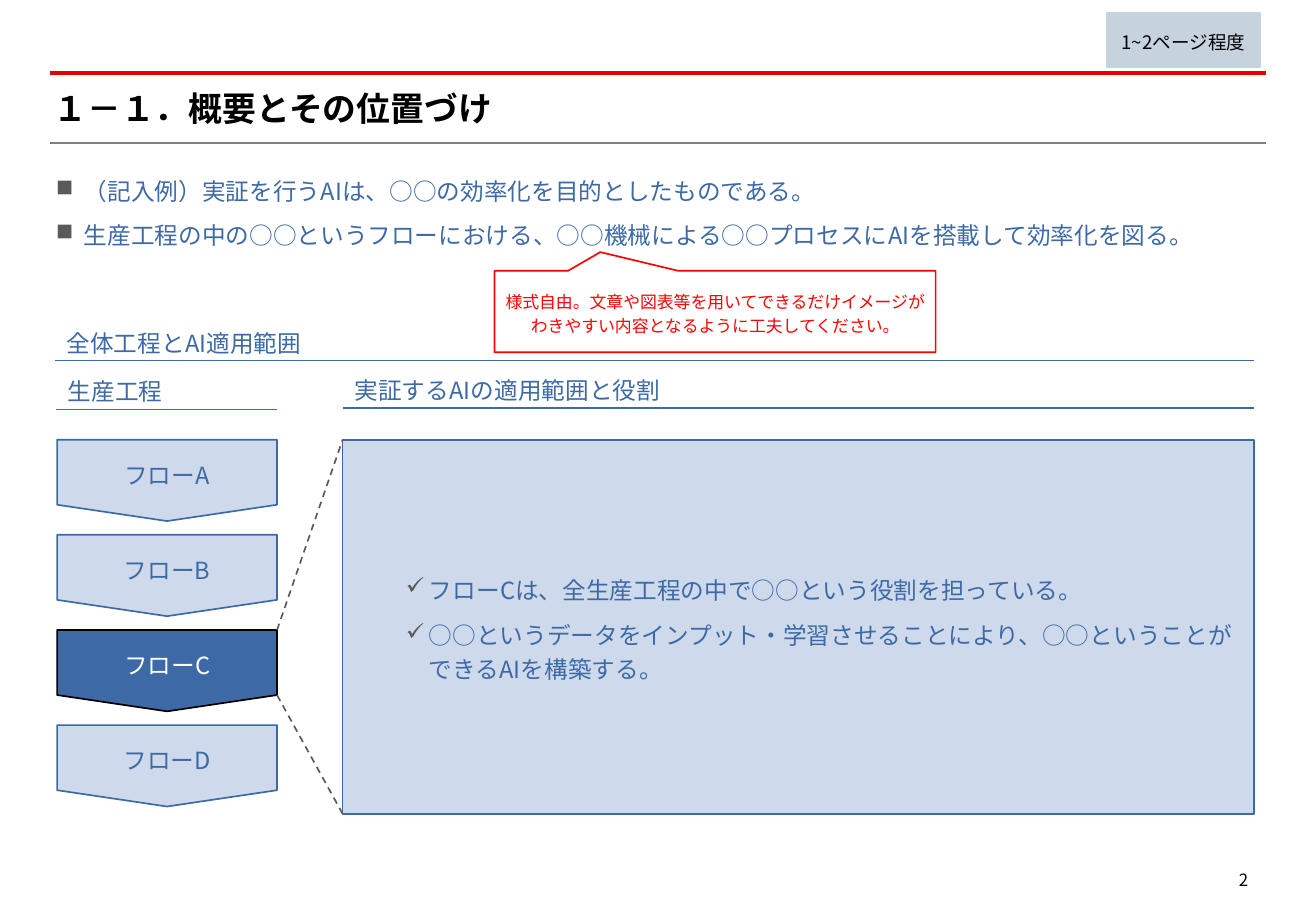
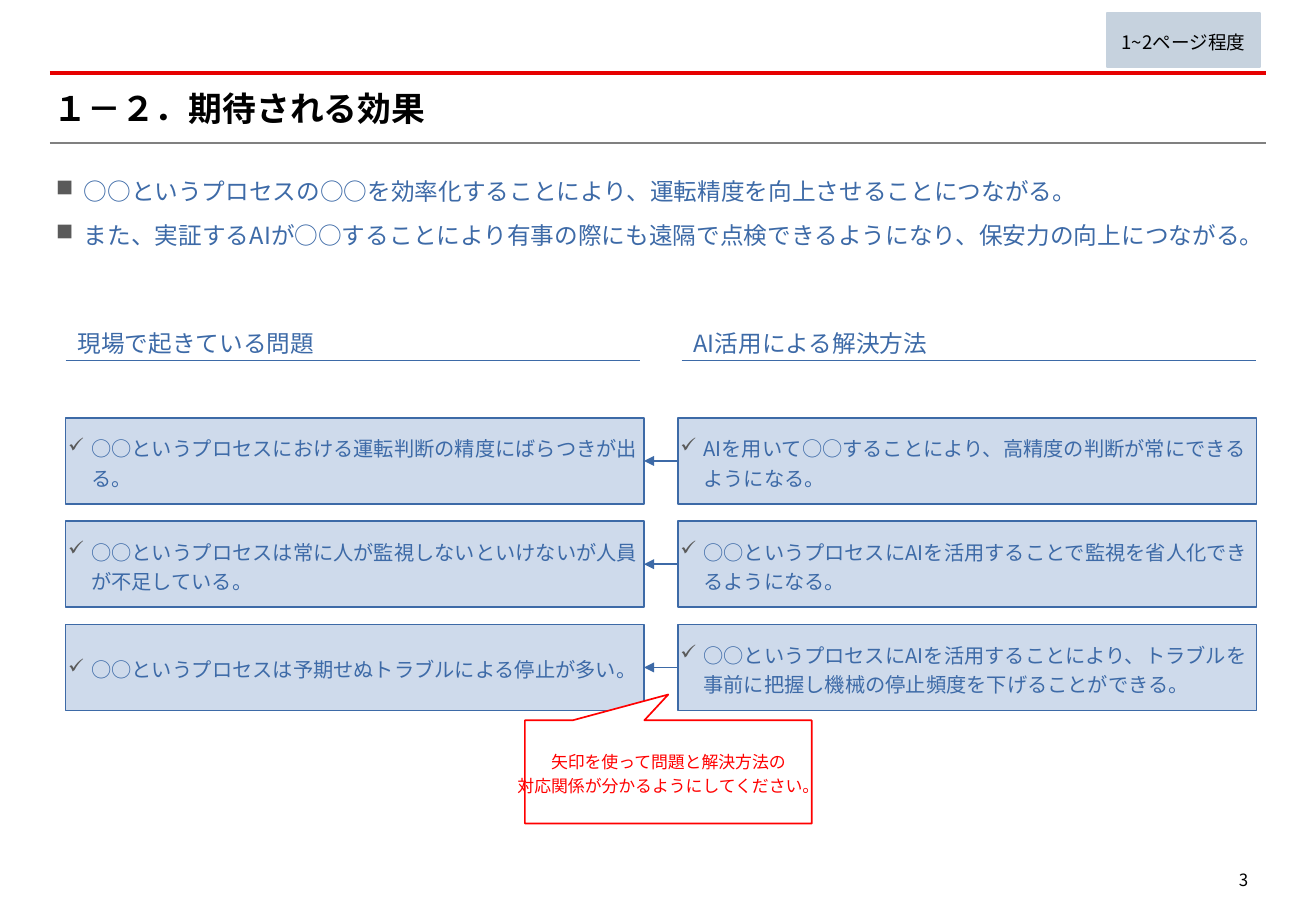
"""Build two slides on an AI trial: its scope in production and its expected effects."""
from lxml import etree
from pptx import Presentation
from pptx.dml.color import RGBColor
from pptx.enum.dml import MSO_LINE
from pptx.enum.lang import MSO_LANGUAGE_ID
from pptx.enum.shapes import MSO_CONNECTOR, MSO_SHAPE
from pptx.enum.text import MSO_ANCHOR, PP_ALIGN
from pptx.oxml.ns import qn
from pptx.util import Inches, Pt

RECT = MSO_SHAPE.RECTANGLE
FLOW = MSO_SHAPE.FLOWCHART_OFFPAGE_CONNECTOR
CALLOUT = MSO_SHAPE.RECTANGULAR_CALLOUT
STRAIGHT = MSO_CONNECTOR.STRAIGHT
DASH = MSO_LINE.DASH
JAPANESE = MSO_LANGUAGE_ID.JAPANESE
LEFT, CENTER, RIGHT = PP_ALIGN.LEFT, PP_ALIGN.CENTER, PP_ALIGN.RIGHT
TOP, MIDDLE = MSO_ANCHOR.TOP, MSO_ANCHOR.MIDDLE

FONT = "Noto Sans CJK JP"
BLUE, PALE, GRAY = "3D6AA7", "CEDAEB", "5A5A5A"
RED, BLACK, WHITE = "FF0000", "000000", "FFFFFF"
TAG, BAND, RULE = "C6D2DE", "E60000", "808080"

PAGE_GUIDE = "1~2ページ程度"
SCOPE = {
    "page": "2",
    "title": "１－１．概要とその位置づけ",
    "points": [
        "（記入例）実証を行うAIは、○○の効率化を目的としたものである。",
        "生産工程の中の○○というフローにおける、○○機械による○○プロセスにAIを搭載して効率化を図る。",
    ],
    "headings": [
        ("全体工程とAI適用範囲", 0.45, 2.63, 9.87),
        ("生産工程", 0.46, 3.03, 1.82),
        ("実証するAIの適用範囲と役割", 2.82, 3.02, 7.5),
    ],
}
FLOWS = ["フローA", "フローB", "フローC", "フローD"]
TRIAL_FLOW = "フローC"
ROLES = [
    "フローCは、全生産工程の中で○○という役割を担っている。",
    "○○というデータをインプット・学習させることにより、○○ということができるAIを構築する。",
]
FREE_FORM = [
    "様式自由。文章や図表等を用いてできるだけイメージが",
    "わきやすい内容となるように工夫してください。",
]
EFFECTS = {
    "page": "3",
    "title": "１－２．期待される効果",
    "points": [
        "○○というプロセスの○○を効率化することにより、運転精度を向上させることにつながる。",
        "また、実証するAIが○○することにより有事の際にも遠隔で点検できるようになり、保安力の向上につながる。",
    ],
    "headings": [
        ("現場で起きている問題", 0.54, 2.63, 4.73),
        ("AI活用による解決方法", 5.61, 2.63, 4.73),
    ],
}
REMEDIES = [
    ("○○というプロセスにおける運転判断の精度にばらつきが出る。",
     "AIを用いて○○することにより、高精度の判断が常にできるようになる。"),
    ("○○というプロセスは常に人が監視しないといけないが人員が不足している。",
     "○○というプロセスにAIを活用することで監視を省人化できるようになる。"),
    ("○○というプロセスは予期せぬトラブルによる停止が多い。",
     "○○というプロセスにAIを活用することにより、トラブルを事前に把握し機械の停止頻度を下げることができる。"),
]
MATCH_UP = ["矢印を使って問題と解決方法の", "対応関係が分かるようにしてください。"]

TITLE_TEXT = dict(size=20, color=BLACK, bold=True, inset=(0, 0), spacing=1.0)
POINT_TEXT = dict(anchor=TOP, inset=(0, 0), gap=6, bullet=("■", 0.23, 0.23))
HEADING_TEXT = dict(inset=(0.1, 0.05))
PAGE_TEXT = dict(size=10, color=BLACK, align=RIGHT, anchor=TOP, inset=(0.1, 0.05))
TAG_TEXT = dict(size=11, color=BLACK, align=CENTER, wrap=False)
NOTE_TEXT = dict(size=10, color=RED, align=CENTER, wrap=False)
ROLE_TEXT = dict(gap=7, bullet=("✓", 0.69, 0.19))
REMEDY_TEXT = dict(size=12, bullet=("✓", 0.19, 0.19))


def paint(color_format, color):
    color_format.rgb = RGBColor.from_string(color)


def assign(target, values):
    for name, value in values.items():
        setattr(target, name, value)


def add_bullet(paragraph, mark, indent, hang):
    props = paragraph._p.get_or_add_pPr()
    props.set("marL", str(Inches(indent)))
    props.set("indent", str(-Inches(hang)))
    tint = etree.SubElement(props, qn("a:buClr"))
    etree.SubElement(tint, qn("a:srgbClr")).set("val", GRAY)
    etree.SubElement(props, qn("a:buChar")).set("char", mark)


def write(shape, lines, size=14, color=BLUE, bold=False, align=LEFT, anchor=MIDDLE,
          inset=(0.02, 0.02), spacing=1.2, gap=0, wrap=True, bullet=None):
    frame = shape.text_frame
    side, edge = map(Inches, inset)
    assign(frame, dict(word_wrap=wrap, vertical_anchor=anchor, margin_left=side,
                       margin_right=side, margin_top=edge, margin_bottom=edge))
    for index, line in enumerate(lines):
        paragraph = frame.add_paragraph() if index else frame.paragraphs[0]
        if bullet:
            add_bullet(paragraph, *bullet)
        assign(paragraph, dict(alignment=align, line_spacing=spacing,
                               space_before=Pt(gap if index else 0)))
        run = paragraph.add_run()
        run.text = line
        assign(run.font, dict(size=Pt(size), bold=bold, name=FONT, language_id=JAPANESE))
        paint(run.font.color, color)
        etree.SubElement(run._r.get_or_add_rPr(), qn("a:ea")).set("typeface", FONT)


def add_text(slide, box, lines, style):
    write(slide.shapes.add_textbox(*map(Inches, box)), lines, **style)


def add_box(slide, preset, box, lines, style, fill=PALE, outline=BLUE):
    shape = slide.shapes.add_shape(preset, *map(Inches, box))
    shape.shadow.inherit = False
    shape.fill.solid()
    paint(shape.fill.fore_color, fill)
    paint(shape.line.color, outline)
    shape.line.width = Pt(1)
    write(shape, lines, **style)
    return shape


def add_line(slide, start, end, color=BLUE, width=1.0, dash=None, arrow=False):
    line = slide.shapes.add_connector(STRAIGHT, *map(Inches, start + end))
    paint(line.line.color, color)
    line.line.width = Pt(width)
    if dash:
        line.line.dash_style = dash
    if arrow:
        etree.SubElement(line.line._get_or_add_ln(), qn("a:tailEnd")).set("type", "triangle")
    etree.SubElement(line._element.spPr, qn("a:effectLst"))


def add_note(slide, box, lines, pointer):
    note = add_box(slide, CALLOUT, box, lines, NOTE_TEXT, WHITE, RED)
    for index, offset in enumerate(pointer):
        note.adjustments[index] = offset


def add_page(deck, content):
    slide = deck.slides.add_slide(deck.slide_layouts[6])
    add_text(slide, (9.93, 7.08, 0.44, 0.28), [content["page"]], PAGE_TEXT)
    for y, color, width in ((0.6, BAND, 2), (1.18, RULE, 1.25)):
        add_line(slide, (0.41, y), (10.42, y), color, width)
    add_text(slide, (0.44, 0.72, 9.91, 0.34), [content["title"]], TITLE_TEXT)
    add_text(slide, (0.46, 1.41, 9.91, 0.62), content["points"], POINT_TEXT)
    add_box(slide, RECT, (9.11, 0.11, 1.26, 0.44), [PAGE_GUIDE], TAG_TEXT, TAG, TAG)
    for heading, left, top, width in content["headings"]:
        height = 0.34
        add_text(slide, (left, top, width, height), [heading], HEADING_TEXT)
        add_line(slide, (left, top + height), (left + width, top + height), width=0.75)
    return slide


def add_scope(deck):
    slide = add_page(deck, SCOPE)
    left, top, width, height = 0.47, 3.62, 1.81, 0.67
    last_top = 5.97
    pitch = (last_top - top) / (len(FLOWS) - 1)
    role_left, role_height = 2.82, 3.08
    for index, flow in enumerate(FLOWS):
        on_trial = flow == TRIAL_FLOW
        fill, outline, color = (BLUE, BLACK, WHITE) if on_trial else (PALE, BLUE, BLUE)
        add_box(slide, FLOW, (left, top + index * pitch, width, height), [flow],
                dict(color=color, align=CENTER), fill, outline)
    add_box(slide, RECT, (role_left, top, 7.5, role_height), ROLES, ROLE_TEXT)
    trial_top = top + FLOWS.index(TRIAL_FLOW) * pitch
    shoulder = trial_top + 0.8 * height
    for flow_y, role_y in ((trial_top, top), (shoulder, top + role_height)):
        add_line(slide, (left + width, flow_y), (role_left, role_y), GRAY, dash=DASH)
    add_note(slide, (4.07, 2.23, 3.63, 0.67), FREE_FORM, (-0.26, -0.73))


def add_effects(deck):
    slide = add_page(deck, EFFECTS)
    problem_left, remedy_left, top = 0.54, 5.58, 3.44
    width, height, pitch = 4.76, 0.71, 0.85
    for index, pair in enumerate(REMEDIES):
        y = top + index * pitch
        for left, text in zip((problem_left, remedy_left), pair):
            add_box(slide, RECT, (left, y, width, height), [text], REMEDY_TEXT)
        middle = y + height / 2
        add_line(slide, (remedy_left, middle), (problem_left + width, middle), arrow=True)
    add_note(slide, (4.32, 5.93, 2.36, 0.85), MATCH_UP, (0, -0.75))


def main():
    deck = Presentation()
    assign(deck, dict(slide_width=Inches(10.83), slide_height=Inches(7.5)))
    add_scope(deck)
    add_effects(deck)
    deck.save("out.pptx")


if __name__ == "__main__":
    main()
